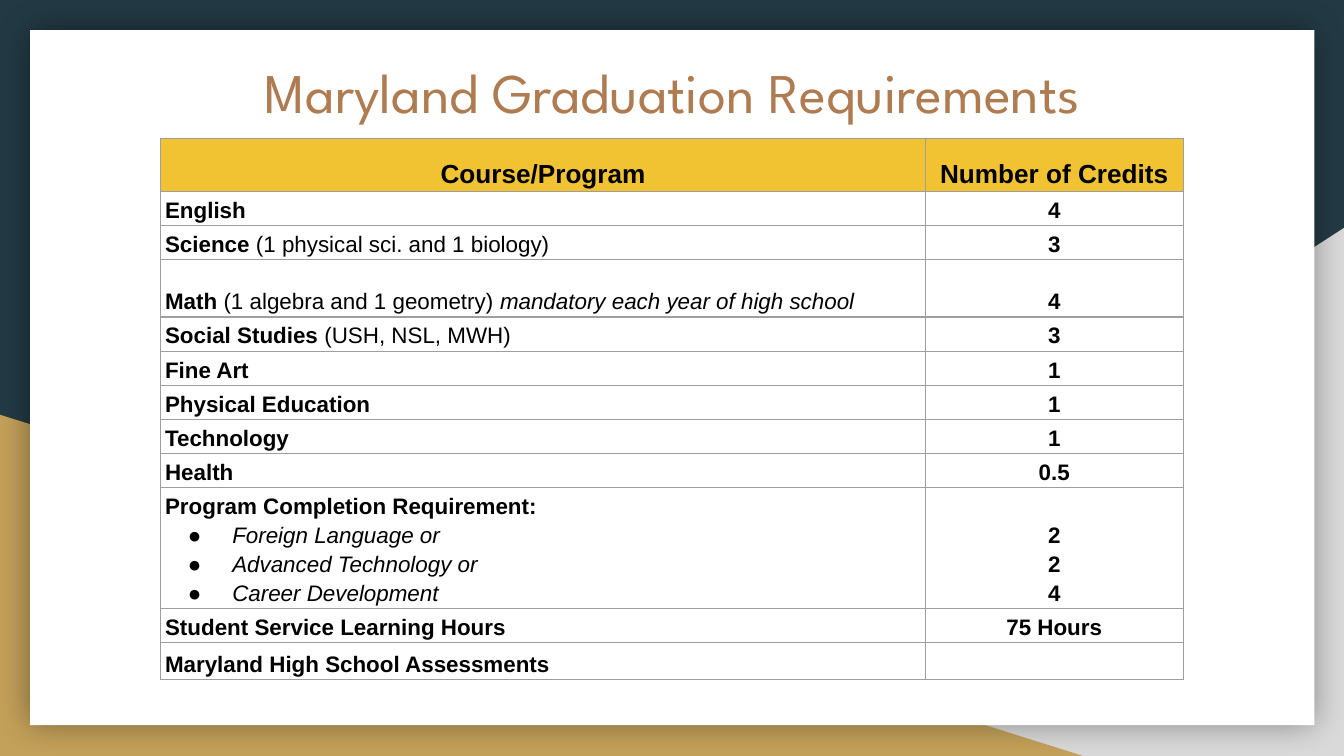
import pptx
import pptx.dml.color
import pptx.enum.shapes
import pptx.enum.text
import pptx.oxml
import pptx.oxml.ns
import pptx.util
from lxml import etree
from pptx.util import Cm

COLORS = {
    "navy": "233A44", "gray": "D9D9D9", "gold": "C4A15A", "white": "FFFFFF",
    "bronze": "AF7B51", "black": "000000", "header": "F1C232", "border": "9E9E9E",
}
NAMESPACE = pptx.oxml.ns.nsdecls("a")
SHAPES = pptx.enum.shapes.MSO_SHAPE
ANCHOR = pptx.enum.text.MSO_ANCHOR
CENTER = pptx.enum.text.PP_ALIGN.CENTER


def rgb(name):
    return pptx.dml.color.RGBColor.from_string(COLORS[name])


def format_run(run, size, style, font="Arial", color="black"):
    run.font.name = font
    run.font.size = pptx.util.Pt(size)
    run.font.bold = "b" in style
    run.font.italic = "i" in style
    run.font.color.rgb = rgb(color)


presentation = pptx.Presentation()
presentation.slide_width = Cm(25.4)
presentation.slide_height = Cm(14.29)
slide = presentation.slides.add_slide(presentation.slide_layouts[5])
slide.background.fill.solid()
slide.background.fill.fore_color.rgb = rgb("navy")

# Corner triangles and white card
backdrop = {}
for name, preset, left, top, width, height in [
    ("gray", SHAPES.RIGHT_TRIANGLE, 9.96, 4.31, 15.44, 9.98),
    ("gold", SHAPES.RIGHT_TRIANGLE, 0, 7.84, 20.47, 6.45),
    ("white", SHAPES.RECTANGLE, 0.57, 0.57, 24.27, 13.14),
]:
    shape = slide.shapes.add_shape(preset, Cm(left), Cm(top), Cm(width), Cm(height))
    shape.shadow.inherit = False
    shape.fill.solid()
    shape.fill.fore_color.rgb = rgb(name)
    shape.line.fill.background()
    backdrop[name] = shape
backdrop["gray"].element.spPr.xfrm.set("flipH", "1")
effects = backdrop["white"].element.spPr.find(pptx.oxml.ns.qn("a:effectLst"))
effects.append(pptx.oxml.parse_xml(
    f'<a:outerShdw {NAMESPACE} blurRad="{pptx.util.Pt(18)}" dist="0" dir="0" algn="ctr" rotWithShape="0">'
    f'<a:srgbClr val="{COLORS["black"]}"><a:alpha val="40000"/></a:srgbClr></a:outerShdw>'))

# Title, brought in front of the card
title = slide.shapes.title
slide.shapes.element.append(title.element)
title.left, title.top, title.width, title.height = Cm(2.29), Cm(0.84), Cm(20.85), Cm(1.45)
frame = title.text_frame
frame.text = "Maryland Graduation Requirements"
frame.word_wrap = True
frame.auto_size = pptx.enum.text.MSO_AUTO_SIZE.NONE
frame.vertical_anchor = ANCHOR.TOP
frame.margin_left = frame.margin_right = frame.margin_top = frame.margin_bottom = Cm(0.25)
frame.paragraphs[0].alignment = CENTER
format_run(frame.paragraphs[0].runs[0], 30, "", "League Spartan", "bronze")

# Requirements: row height, course paragraphs as (text, style) runs, credits
ROWS = [
    (1.0, [[("Course/Program", "b")]], ["Number of Credits"]),
    (0.6, [[("English", "b")]], ["4"]),
    (0.6, [[("Science", "b"), (" (1 physical sci. and 1 biology)", "")]], ["3"]),
    (1.08, [[("Math", "b"), (" (1 algebra and 1 geometry) ", ""),
             ("mandatory each year of high school", "i")]], ["4"]),
    (0.6, [[("Social Studies ", "b"), ("(USH, NSL, MWH)", "")]], ["3"]),
    (0.6, [[("Fine Art", "b")]], ["1"]),
    (0.6, [[("Physical Education", "b")]], ["1"]),
    (0.6, [[("Technology", "b")]], ["1"]),
    (0.6, [[("Health", "b")]], ["0.5"]),
    (2.08, [[("Program Completion Requirement:", "b")], [("Foreign Language or", "i")],
            [("Advanced Technology or", "i")], [("Career Development", "i")]], ["2", "2", "4"]),
    (0.6, [[("Student Service Learning Hours", "b")]], ["75 Hours"]),
    (0.7, [[("Maryland High School Assessments", "b")]], []),
]
total_height = sum(row[0] for row in ROWS)
table = slide.shapes.add_table(
    len(ROWS), 2, Cm(3.04), Cm(2.62), Cm(19.32), Cm(total_height)).table
table.columns[0].width = Cm(14.45)
table.columns[1].width = Cm(4.87)

for row_index, (height, course, credits) in enumerate(ROWS):
    table.rows[row_index].height = Cm(height)
    size = 14 if row_index == 0 else 12
    credit_paragraphs = [[(text, "b")] for text in credits]
    for column_index, paragraphs in enumerate([course, credit_paragraphs]):
        cell = table.cell(row_index, column_index)
        cell.vertical_anchor = ANCHOR.BOTTOM
        cell.margin_left = cell.margin_right = Cm(0.08)
        cell.margin_top = cell.margin_bottom = Cm(0.05)

        # Cell borders come before the fill in the cell properties
        properties = cell._tc.get_or_add_tcPr()
        for side in ("lnL", "lnR", "lnT", "lnB"):
            properties.append(pptx.oxml.parse_xml(
                f'<a:{side} {NAMESPACE} w="{pptx.util.Pt(0.75)}"><a:solidFill>'
                f'<a:srgbClr val="{COLORS["border"]}"/></a:solidFill></a:{side}>'))
        cell.fill.solid()
        cell.fill.fore_color.rgb = rgb("header" if row_index == 0 else "white")

        # Cell text; the paragraphs after the first course line are bulleted
        frame = cell.text_frame
        for index, runs in enumerate(paragraphs):
            paragraph = frame.paragraphs[0] if index == 0 else frame.add_paragraph()
            paragraph.line_spacing = 1.15
            if column_index == 1 or row_index == 0:
                paragraph.alignment = CENTER
            elif index > 0:
                bullet = paragraph._p.get_or_add_pPr()
                bullet.set("marL", str(Cm(1.27)))
                bullet.set("indent", str(-Cm(0.84)))
                bullet.append(pptx.oxml.parse_xml(
                    f'<a:buClr {NAMESPACE}><a:srgbClr val="{COLORS["black"]}"/></a:buClr>'))
                bullet.append(pptx.oxml.parse_xml(f'<a:buFont {NAMESPACE} typeface="Arial"/>'))
                bullet.append(pptx.oxml.parse_xml(f'<a:buChar {NAMESPACE} char="●"/>'))
            for text, style in runs:
                run = paragraph.add_run()
                run.text = text
                format_run(run, size, style)
        if not paragraphs:
            end = etree.SubElement(frame.paragraphs[0]._p, pptx.oxml.ns.qn("a:endParaRPr"))
            end.set("sz", "1200")

presentation.save("out.pptx")
